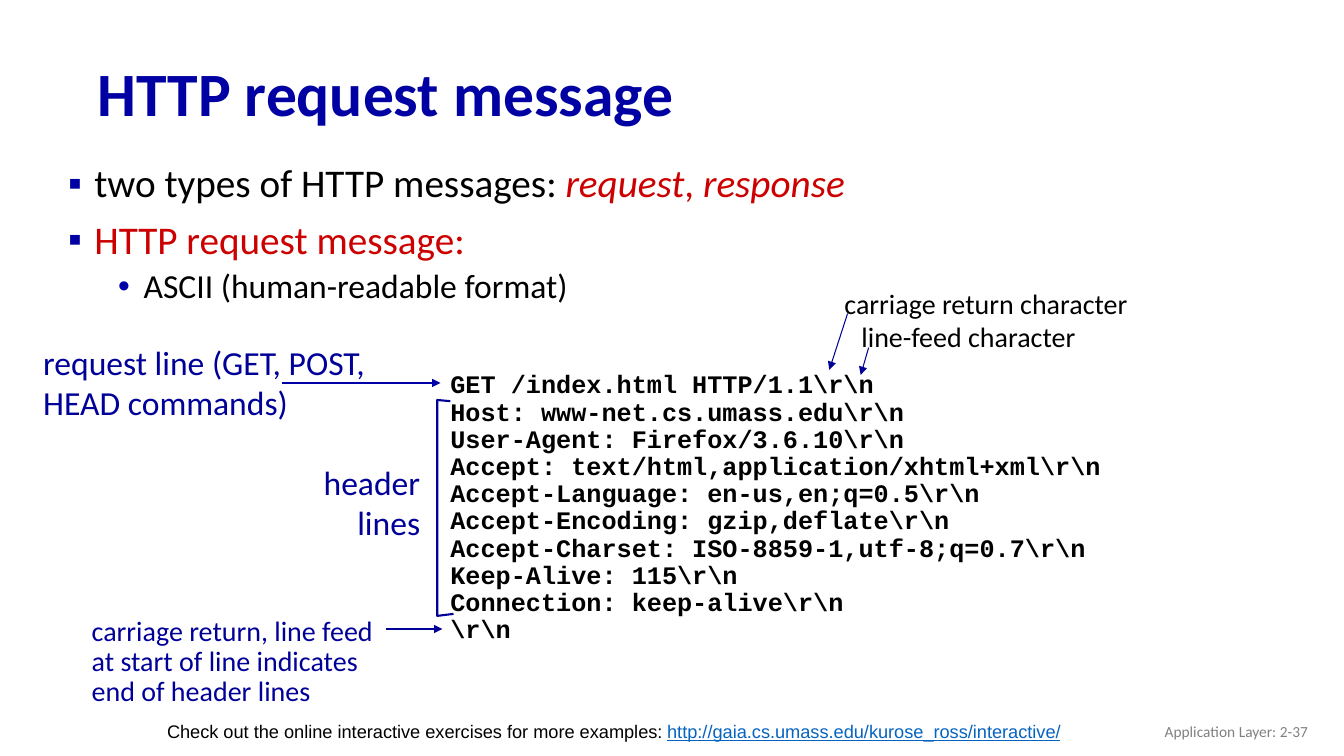
from lxml.etree import SubElement as Sub
from pptx import Presentation
from pptx.dml.color import RGBColor as RGB
from pptx.enum.shapes import MSO_CONNECTOR as LINE
from pptx.enum.text import MSO_ANCHOR as ANCHOR, PP_ALIGN as ALIGN
from pptx.oxml.ns import qn
from pptx.util import Cm, Pt

INK = {
    "title": "0000A3", "note": "000099", "arrow": "0000A8", "text": "000000",
    "key": "CC0000", "foot": "808080", "link": "0563C1",
}
CODE = [
    r"GET /index.html HTTP/1.1\r\n",
    r"Host: www-net.cs.umass.edu\r\n",
    r"User-Agent: Firefox/3.6.10\r\n",
    r"Accept: text/html,application/xhtml+xml\r\n",
    r"Accept-Language: en-us,en;q=0.5\r\n",
    r"Accept-Encoding: gzip,deflate\r\n",
    r"Accept-Charset: ISO-8859-1,utf-8;q=0.7\r\n",
    r"Keep-Alive: 115\r\n",
    r"Connection: keep-alive\r\n",
    r"\r\n",
]


def color(name):
    return RGB.from_string(INK[name])


def add_run(para, text, size, ink="text", face="Calibri", bold=False,
            italic=False, under=False):
    run = para.add_run()
    run.text = text
    font = run.font
    font.name, font.size = face, Pt(size)
    font.bold, font.italic, font.underline = bold, italic, under
    font.color.rgb = color(ink)


def add_text(slide, box, paras, align=ALIGN.LEFT, anchor=ANCHOR.TOP,
             space=1.0, **style):
    """Add a text box; a paragraph is a string or a list of (text, style)."""
    frame = slide.shapes.add_textbox(*map(Cm, box)).text_frame
    frame.word_wrap = True
    frame.vertical_anchor = anchor
    for i, parts in enumerate(paras):
        para = frame.add_paragraph() if i else frame.paragraphs[0]
        para.alignment, para.line_spacing = align, space
        if isinstance(parts, str):
            parts = [(parts, {})]
        for text, extra in parts:
            add_run(para, text, **{**style, **extra})
    return frame


def set_bullet(para, char, ink, left, hang, before):
    props = para._p.get_or_add_pPr()
    props.set("marL", str(Cm(left)))
    props.set("indent", str(-Cm(hang)))
    tint = Sub(props, qn("a:buClr"))
    Sub(tint, qn("a:srgbClr"), val=INK[ink])
    Sub(props, qn("a:buFont"), typeface="Arial")
    Sub(props, qn("a:buChar"), char=char)
    if before:
        para.space_before = Pt(before)


def add_arrow(slide, start, end, ink="note", width=1.5):
    arrow = slide.shapes.add_connector(
        LINE.STRAIGHT, *map(Cm, (*start, *end)))
    arrow.line.color.rgb = color(ink)
    arrow.line.width = Pt(width)
    Sub(arrow.line._get_or_add_ln(), qn("a:tailEnd"), type="triangle")
    Sub(arrow._element.spPr, qn("a:effectLst"))


def add_brace(slide, points):
    """Draw the open bracket beside the header lines."""
    first, *rest = [(Cm(x), Cm(y)) for x, y in points]
    path = slide.shapes.build_freeform(*first)
    path.add_line_segments(rest, close=False)
    brace = path.convert_to_shape()
    brace.shadow.inherit = False
    brace.fill.background()
    brace.line.color.rgb = color("note")
    brace.line.width = Pt(1.5)


def add_points(slide):
    red = {"ink": "key"}
    term = {"ink": "key", "italic": True}
    frame = add_text(slide, (1.47, 4.01, 32.39, 3.96), [
        [("two types of HTTP messages: ", {}), ("request", term),
         (", ", red), ("response", term)],
        [("HTTP request message:", red)],
        [("ASCII (human-readable format)", {"size": 24})],
    ], size=28, space=0.9)
    top, mid, sub = frame.paragraphs
    set_bullet(top, "▪", "title", 0.66, 0.66, 0)
    set_bullet(mid, "▪", "title", 0.66, 0.66, 10)
    set_bullet(sub, "•", "arrow", 1.9, 0.64, 5)


def add_labels(slide):
    add_text(slide, (0.84, 8.48, 8.79, 2.31),
             ["request line (GET, POST,", "HEAD commands)"],
             size=24, ink="note")
    add_text(slide, (7.87, 11.51, 2.97, 2.31), ["header", "lines"],
             align=ALIGN.RIGHT, size=24, ink="note")
    add_text(slide, (2.06, 15.42, 7.7, 2.57),
             ["carriage return, line feed at start of line "
              "indicates end of header lines"],
             space=0.9, size=20, ink="note")
    add_text(slide, (21.03, 7.09, 7.72, 1.12),
             ["carriage return character"], size=20)
    add_text(slide, (21.46, 7.92, 5.97, 1.12),
             ["line-feed character"], size=20)


def main():
    deck = Presentation()
    deck.slide_width, deck.slide_height = Cm(33.87), Cm(19.05)
    slide = deck.slides.add_slide(deck.slide_layouts[6])

    add_text(slide, (2.21, 1.19, 29.21, 2.49), ["HTTP request message"],
             anchor=ANCHOR.MIDDLE, space=0.9, size=44, ink="title", bold=True)
    add_text(slide, (25.6, 17.91, 7.62, 1.02), ["Application Layer: 2-37"],
             align=ALIGN.RIGHT, anchor=ANCHOR.MIDDLE, size=11, ink="foot")
    add_points(slide)
    add_labels(slide)
    add_text(slide, (11.1, 9.25, 17.07, 7.19), CODE, space=0.9,
             size=18, face="Courier New", bold=True)

    add_brace(slide, [(11.35, 10.11), (11.02, 10.08),
                      (11.02, 15.52), (11.43, 15.47)])
    add_arrow(slide, (7.11, 9.65), (11.1, 9.65), ink="arrow")
    add_arrow(slide, (9.73, 15.85), (11.15, 15.85))
    add_arrow(slide, (21.36, 7.9), (20.9, 9.32), width=0.75)
    add_arrow(slide, (21.89, 8.76), (21.69, 9.45), width=0.75)

    add_text(slide, (3.96, 18.03, 24.21, 0.81), [[
        ("Check out the online interactive exercises for more examples: ", {}),
        ("http://gaia.cs.umass.edu/kurose_ross/interactive/",
         {"ink": "link", "under": True}),
    ]], size=13, face="Arial")
    deck.save("out.pptx")


if __name__ == "__main__":
    main()
